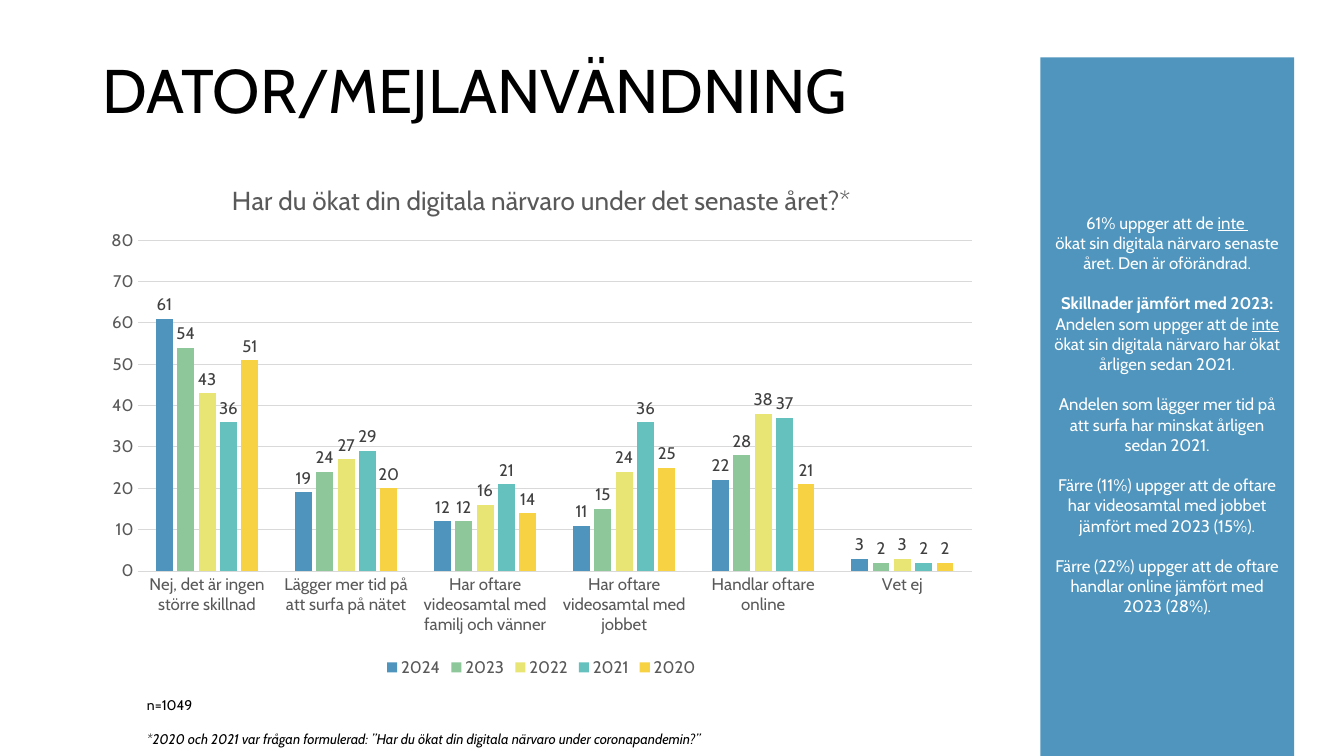
from lxml.etree import SubElement
from pptx import Presentation
from pptx.chart.data import CategoryChartData
from pptx.dml.color import RGBColor
from pptx.enum.chart import XL_CHART_TYPE as ChartType, XL_LABEL_POSITION as LabelPos
from pptx.enum.chart import XL_LEGEND_POSITION as LegendPos, XL_TICK_MARK as Tick
from pptx.enum.shapes import MSO_SHAPE as Preset
from pptx.enum.text import MSO_ANCHOR as Anchor, PP_ALIGN as Align
from pptx.oxml.ns import qn
from pptx.util import Inches, Pt


def color(hex_value):
    """Turn a hex string into a colour."""
    return RGBColor.from_string(hex_value)


def assign(target, values):
    """Set each attribute named in a dict."""
    for name, value in values.items():
        setattr(target, name, value)


def place(parent, index, **shares):
    """Give a chart part a manual layout in shares of the chart."""
    for old in parent.findall(qn("c:layout")):
        parent.remove(old)
    layout = SubElement(parent, qn("c:layout"))
    parent.insert(index, layout)
    manual = SubElement(layout, qn("c:manualLayout"))
    if "w" in shares:
        SubElement(manual, qn("c:layoutTarget"), val="inner")
    for side in ("x", "y"):
        SubElement(manual, qn(f"c:{side}Mode"), val="edge")
    for side, share in shares.items():
        SubElement(manual, qn(f"c:{side}"), val=str(share))


class SlideBuilder:
    """Hold the style and the slide, on a grid of 100 columns and 100 rows."""

    FONT = "Cabin"
    GRAY, LABEL, GRID = "595959", "404040", "D9D9D9"

    def __init__(self, deck):
        """Add a blank slide."""
        self.column, self.row = deck.slide_width / 100, deck.slide_height / 100
        self.shapes = deck.slides.add_slide(deck.slide_layouts[6]).shapes

    def area(self, left, top, width, height):
        """Convert grid units to lengths."""
        return [int(n * unit) for n, unit in
                zip((left, top, width, height), (self.column, self.row) * 2)]

    def style(self, font, size, hex_value, **extra):
        """Style a font."""
        assign(font, {"name": self.FONT, "size": Pt(size), **extra})
        font.color.rgb = color(hex_value)

    def fill_frame(self, frame, paragraphs, size, hex_value, **layout):
        """Fill a frame with (space before, runs) paragraphs."""
        frame.word_wrap = True
        for number, (gap, runs) in enumerate(paragraphs):
            paragraph = frame.add_paragraph() if number else frame.paragraphs[0]
            assign(paragraph, {"space_before": Pt(gap), **layout})
            for words, extra in runs:
                if words == "\n":
                    paragraph.add_line_break()
                    SubElement(paragraph._p[-1], qn("a:rPr"), sz=str(size * 100))
                    continue
                run = paragraph.add_run()
                run.text = words
                self.style(run.font, size, hex_value, **extra)

    def text(self, area, paragraphs, size, anchor=Anchor.TOP, **layout):
        """Add a text box."""
        frame = self.shapes.add_textbox(*self.area(*area)).text_frame
        frame.vertical_anchor = anchor
        self.fill_frame(frame, paragraphs, size, "000000", **layout)

    def panel(self, area, paragraphs, size, fill):
        """Add a filled rectangle with centred white text."""
        panel = self.shapes.add_shape(Preset.RECTANGLE, *self.area(*area))
        panel.shadow.inherit = False
        panel.fill.solid()
        panel.fill.fore_color.rgb = color(fill)
        panel.line.fill.background()
        panel.text_frame.vertical_anchor = Anchor.MIDDLE
        self.fill_frame(panel.text_frame, paragraphs, size, "FFFFFF", alignment=Align.CENTER)

    def axis_line(self, line):
        """Draw a thin grey chart line."""
        line.color.rgb = color(self.GRID)
        line.width = Pt(0.75)

    def column_chart(self, area, heading, categories, series):
        """Add a clustered column chart from {name: (colour, values)}."""
        data = CategoryChartData()
        data.categories = categories
        for name, (_, values) in series.items():
            data.add_series(name, values)
        chart = self.shapes.add_chart(
            ChartType.COLUMN_CLUSTERED, *self.area(*area), data).chart
        self.style(chart.font, 12, self.GRAY)
        assign(chart, {"has_title": True, "has_legend": True})
        title = chart.chart_title
        self.fill_frame(title.text_frame, [(0, [(heading, {"bold": False})])], 18.6, self.GRAY)
        place(title.element, 1, x=0.15, y=0.04)
        place(chart.element.find(".//" + qn("c:plotArea")), 0, x=0.05, y=0.16, w=0.93, h=0.63)
        assign(chart.legend, {"position": LegendPos.BOTTOM, "include_in_layout": False})
        self.style(chart.legend.font, 12, self.GRAY)

        marks = {"major_tick_mark": Tick.NONE, "minor_tick_mark": Tick.NONE}
        scale = {"minimum_scale": 0, "maximum_scale": 80, "major_unit": 10,
                 "has_major_gridlines": True}
        for axis, values in ((chart.category_axis, marks), (chart.value_axis, marks | scale)):
            assign(axis, values)
            self.style(axis.tick_labels.font, 12, self.GRAY)
        self.axis_line(chart.category_axis.format.line)
        self.axis_line(chart.value_axis.major_gridlines.format.line)
        chart.value_axis.format.line.fill.background()

        plot = chart.plots[0]
        assign(plot, {"gap_width": 219, "overlap": -27, "vary_by_categories": False})
        for year, (fill, _) in zip(plot.series, series.values()):
            year.format.fill.solid()
            year.format.fill.fore_color.rgb = color(fill)
            assign(year.data_labels, {"show_value": True, "position": LabelPos.OUTSIDE_END})
            self.style(year.data_labels.font, 12, self.LABEL)


def main():
    """Build and save the slide."""
    deck = Presentation()
    assign(deck, {"slide_width": Inches(13.33), "slide_height": Inches(7.5)})
    slide = SlideBuilder(deck)
    underlined = {"underline": True}

    slide.text((6.9, 2.67, 86.25, 19.33), [(0, [("DATOR/MEJLANVÄNDNING", {})])],
               44, Anchor.MIDDLE, line_spacing=0.9)
    slide.column_chart(
        (6.9, 20.67, 66.75, 69.47),
        "Har du ökat din digitala närvaro under det senaste året?*",
        ["Nej, det är ingen större skillnad", "Lägger mer tid på att surfa på nätet",
         "Har oftare videosamtal med familj och vänner",
         "Har oftare videosamtal med jobbet", "Handlar oftare online", "Vet ej"],
        {"2024": ("4E94BD", (61, 19, 12, 11, 22, 3)),
         "2023": ("8DC79A", (54, 24, 12, 15, 28, 2)),
         "2022": ("E8E575", (43, 27, 16, 24, 38, 3)),
         "2021": ("65C1BE", (36, 29, 21, 36, 37, 2)),
         "2020": ("F7D243", (51, 20, 14, 25, 21, 2))})
    slide.text((10.2, 91.47, 74.25, 10.27), [
        (0, [("n=1049", {})]),
        (12, [("*2020 och 2021 var frågan formulerad: ”Har du ökat din digitala närvaro "
               "under coronapandemin?”", {"italic": True})])], 10)
    slide.panel((77.4, 7.6, 18.9, 94.4), [
        (0, [("61% uppger att de ", {}), ("inte ", underlined), ("\n", {}),
             ("ökat sin digitala närvaro senaste året. Den är oförändrad.", {})]),
        (14.5, [("Skillnader jämfört med 2023:", {"bold": True})]),
        (0, [("Andelen som uppger att de ", {}), ("inte", underlined),
             (" ökat sin digitala närvaro har ökat årligen sedan 2021.", {})]),
        (14.5, [("Andelen som lägger mer tid på att surfa har minskat årligen sedan 2021.", {})]),
        (14.5, [("Färre (11%) uppger att de oftare har videosamtal med jobbet "
                 "jämfört med 2023 (15%).", {})]),
        (14.5, [("Färre (22%) uppger att de oftare handlar online "
                 "jämfört med 2023 (28%).", {})])], 12, "4F95BD")
    deck.save("out.pptx")


if __name__ == "__main__":
    main()
